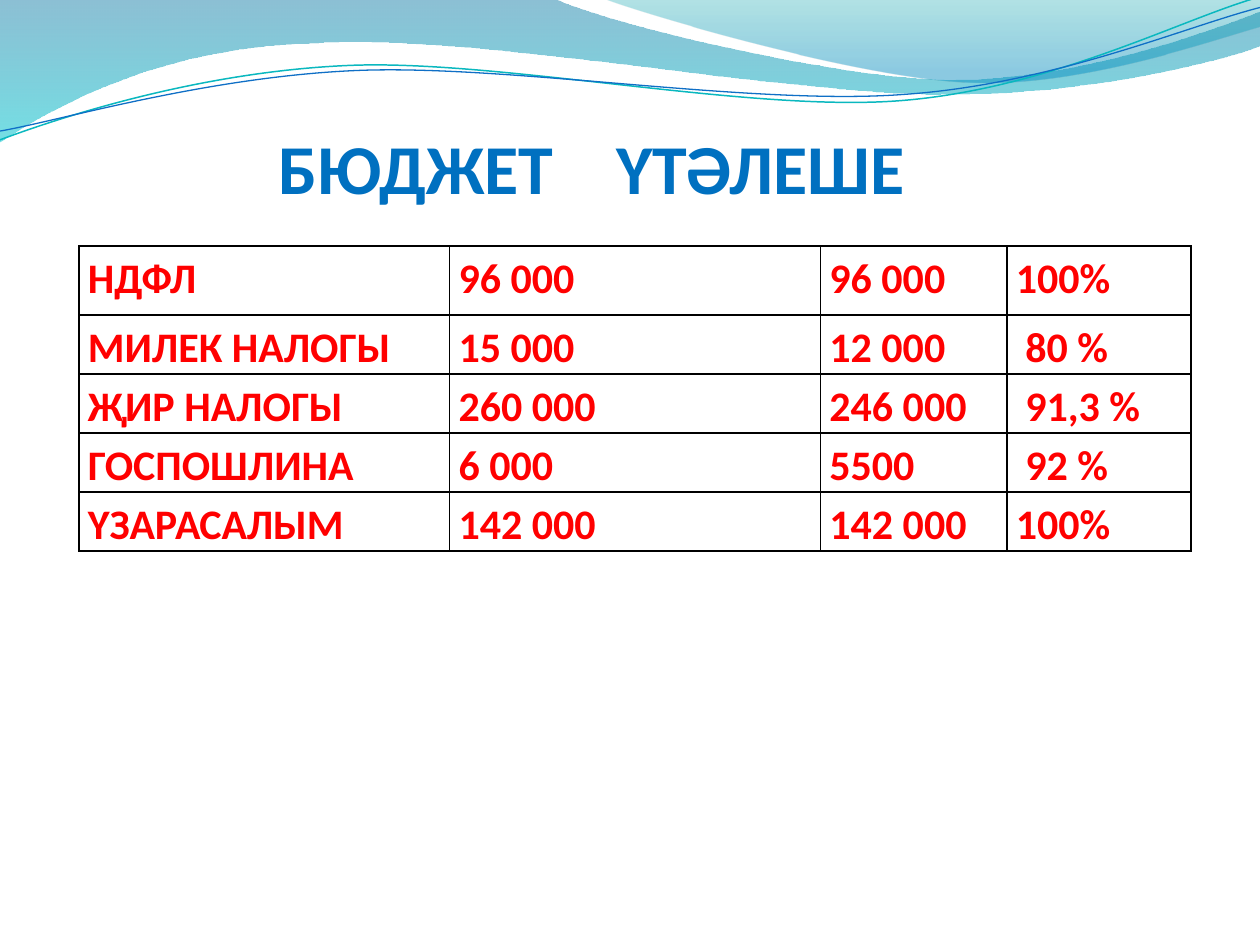
import math

import pptx
import pptx.dml.color
import pptx.enum.text
import pptx.oxml
import pptx.oxml.ns
import pptx.util
from lxml import etree

Pt = pptx.util.Pt
qn = pptx.oxml.ns.qn
FONT = "Calibri"

TITLE = "БЮДЖЕТ    ҮТӘЛЕШЕ"
BUDGET = [
    ("НДФЛ", "96 000", "96 000", "100%"),
    ("МИЛЕК НАЛОГЫ", "15 000", "12 000", " 80 %"),
    ("ҖИР НАЛОГЫ", "260 000", "246 000", " 91,3 %"),
    ("ГОСПОШЛИНА", "6 000", "5500", " 92 %"),
    ("ҮЗАРАСАЛЫМ", "142 000", "142 000", "100%"),
]
COLUMN_WIDTHS = (211.9, 211.9, 106.5, 105.4)
ROW_HEIGHTS = (39.5, 28.8, 28.8, 28.8, 28.8)

# Each outline is a list of steps: one point is a line, three points are a Bezier curve.
# Gradient stops are (position, colour, opacity in percent).
BANDS = [
    ([[(0, 0)], [(316.8, -0.7)],
      [(342.7, 12.2), (478.1, 45.4), (545.8, 45.4)],
      [(614.2, 45.4), (689.8, 18.7), (720, 6.5)],
      [(720.7, 25.9)],
      [(707.8, 31.7), (626.4, 54.7), (537.1, 54)],
      [(447.8, 54), (275, 20.2), (185, 24.5)],
      [(92.9, 25.9), (33.1, 59.8), (-0.7, 81.4)]],
     [(0, "0074A1", 45), (1, "00C6CF", 55)]),
    ([[(344.9, -0.7)],
      [(366.5, 7.9), (491, 44.6), (553.7, 46.8)],
      [(616.3, 49.7), (691.9, 23), (720, 15.1)],
      [(720, 0)]],
     [(0, "00A1A9", 30), (0.8, "008BBF", 45)]),
]
WAVE_TILT = -2.7
# Steps, centre of the tilt, colour, line width.
WAVES = [
    ([[(0, 79.9)],
      [(34.6, 67), (113.8, 41), (199.4, 37.4)],
      [(284.4, 33.8), (427, 64.1), (513.4, 57.6)],
      [(599.8, 51.1), (675.4, 10.8), (718.6, -1.4)]], (359.3, 41.4), "0AB8BF", 0.85),
    ([[(0, 74.9)],
      [(33.8, 69.1), (118.1, 43.9), (203.8, 40.3)],
      [(290.2, 36.7), (429.8, 60.5), (516.2, 54)],
      [(601.9, 48.2), (677.5, 15.1), (720, 4.3)]], (359.6, 42.5), "0F6FC6", 0.75),
]


def rgb(value):
    return pptx.dml.color.RGBColor.from_string(value)


def turn(point, centre, degrees):
    """Rotate a point clockwise about a centre."""
    angle = math.radians(degrees)
    x, y = point[0] - centre[0], point[1] - centre[1]
    return (centre[0] + x * math.cos(angle) - y * math.sin(angle),
            centre[1] + x * math.sin(angle) + y * math.cos(angle))


def add_outline(page, steps, closed):
    """Draw all points as line segments, then join each group of three into a curve."""
    points = [(Pt(x), Pt(y)) for step in steps for x, y in step]
    builder = page.shapes.build_freeform(*points[0], scale=1.0)
    builder.add_line_segments(points[1:], close=closed)
    shape = builder.convert_to_shape()
    shape.shadow.inherit = False
    segments = iter(list(shape.element.spPr.iter(qn("a:lnTo"))))
    for step in steps[1:]:
        parts = [next(segments) for _ in step]
        if len(parts) == 3:
            curve = etree.Element(qn("a:cubicBezTo"))
            parts[0].addprevious(curve)
            for part in parts:
                curve.append(part[0])
                part.getparent().remove(part)
    return shape


def add_band(page, steps, stops):
    shape = add_outline(page, steps, True)
    shape.line.fill.background()
    shape.fill.gradient()
    shape.fill.gradient_angle = 270
    for stop, (position, color, _) in zip(shape.fill.gradient_stops, stops):
        stop.position = position
        stop.color.rgb = rgb(color)
    colors = shape.element.spPr.iter(qn("a:srgbClr"))
    for element, (_, _, opacity) in zip(colors, stops):
        etree.SubElement(element, qn("a:alpha"), val=str(opacity * 1000))


def add_wave(page, steps, centre, color, width):
    level = [[turn(point, centre, -WAVE_TILT) for point in step] for step in steps]
    shape = add_outline(page, level, False)
    shape.rotation = WAVE_TILT
    shape.fill.background()
    shape.line.color.rgb = rgb(color)
    shape.line.width = Pt(width)


def add_span(para, text, size, color):
    span = para.add_run()
    span.text = text
    span.font.name = FONT
    span.font.size = Pt(size)
    span.font.bold = True
    span.font.color.rgb = rgb(color)


def add_borders(cell):
    properties = cell._tc.get_or_add_tcPr()
    for index, side in enumerate(("lnL", "lnR", "lnT", "lnB")):
        properties.insert(index, pptx.oxml.parse_xml(
            f'<a:{side} {pptx.oxml.ns.nsdecls("a")} w="{Pt(1)}"><a:solidFill>'
            f'<a:srgbClr val="000000"/></a:solidFill></a:{side}>'))


def add_budget(page):
    frame = page.shapes.add_table(len(BUDGET), len(COLUMN_WIDTHS), Pt(45), Pt(140.6),
                                  Pt(sum(COLUMN_WIDTHS)), Pt(sum(ROW_HEIGHTS)))
    table = frame.table
    table.first_row = table.horz_banding = False
    for column, width in zip(table.columns, COLUMN_WIDTHS):
        column.width = Pt(width)
    for row, height, texts in zip(table.rows, ROW_HEIGHTS, BUDGET):
        row.height = Pt(height)
        for cell, text in zip(row.cells, texts):
            cell.margin_left = cell.margin_right = Pt(5.2)
            cell.margin_top = cell.margin_bottom = 0
            cell.fill.background()
            add_borders(cell)
            para = cell.text_frame.paragraphs[0]
            para.line_spacing = 1.15
            add_span(para, text, 24, "FF0000")


def add_title(page):
    box = page.shapes.add_textbox(Pt(152), Pt(67.7), Pt(394), Pt(55.4))
    frame = box.text_frame
    frame.word_wrap = True
    frame.auto_size = pptx.enum.text.MSO_AUTO_SIZE.SHAPE_TO_FIT_TEXT
    frame.vertical_anchor = pptx.enum.text.MSO_ANCHOR.MIDDLE
    add_span(frame.paragraphs[0], TITLE, 40, "0070C0")


def main():
    deck = pptx.Presentation()
    deck.slide_width, deck.slide_height = Pt(720), Pt(540)
    page = deck.slides.add_slide(deck.slide_layouts[6])
    for band in BANDS:
        add_band(page, *band)
    for wave in WAVES:
        add_wave(page, *wave)
    add_budget(page)
    add_title(page)
    deck.save("out.pptx")


if __name__ == "__main__":
    main()
